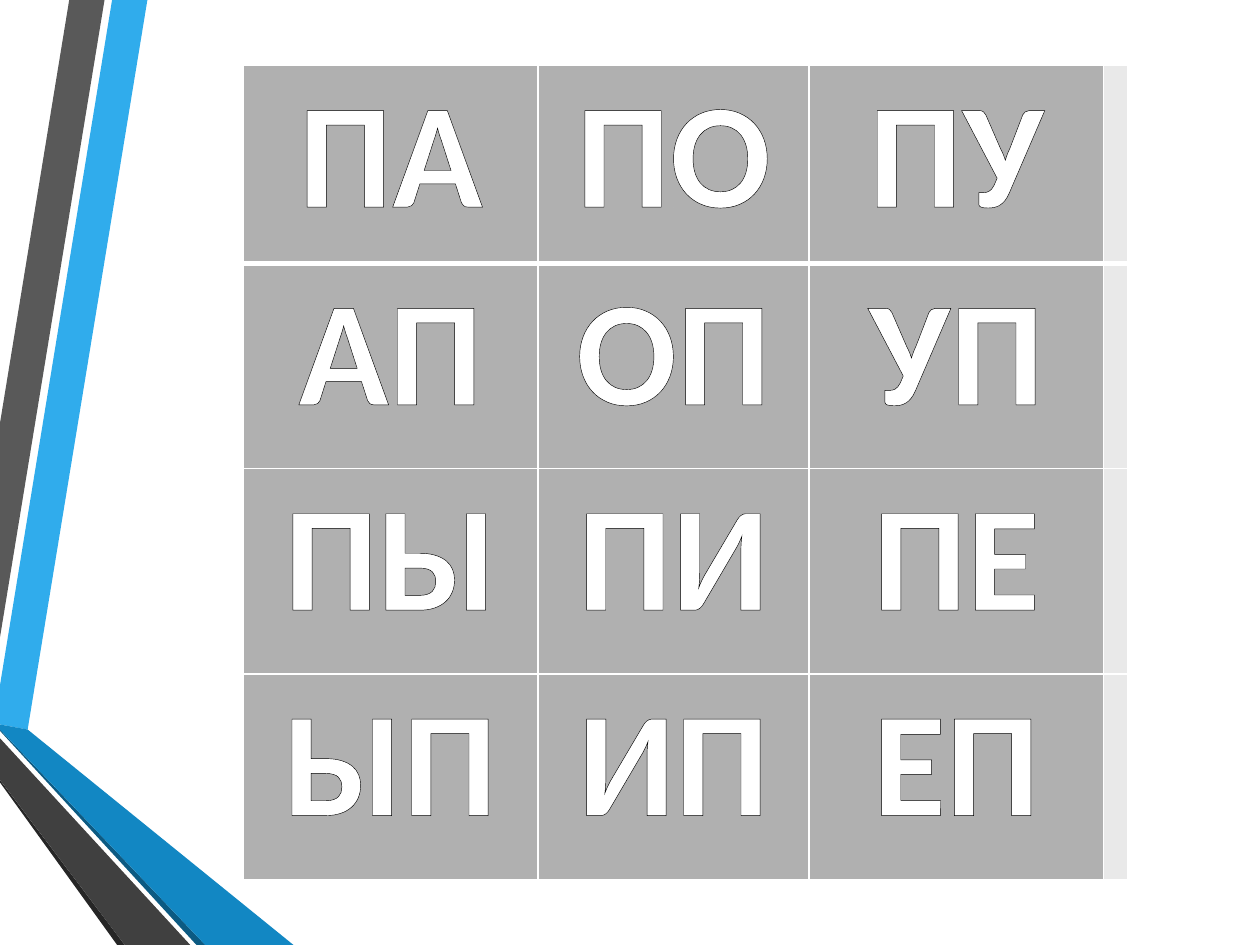
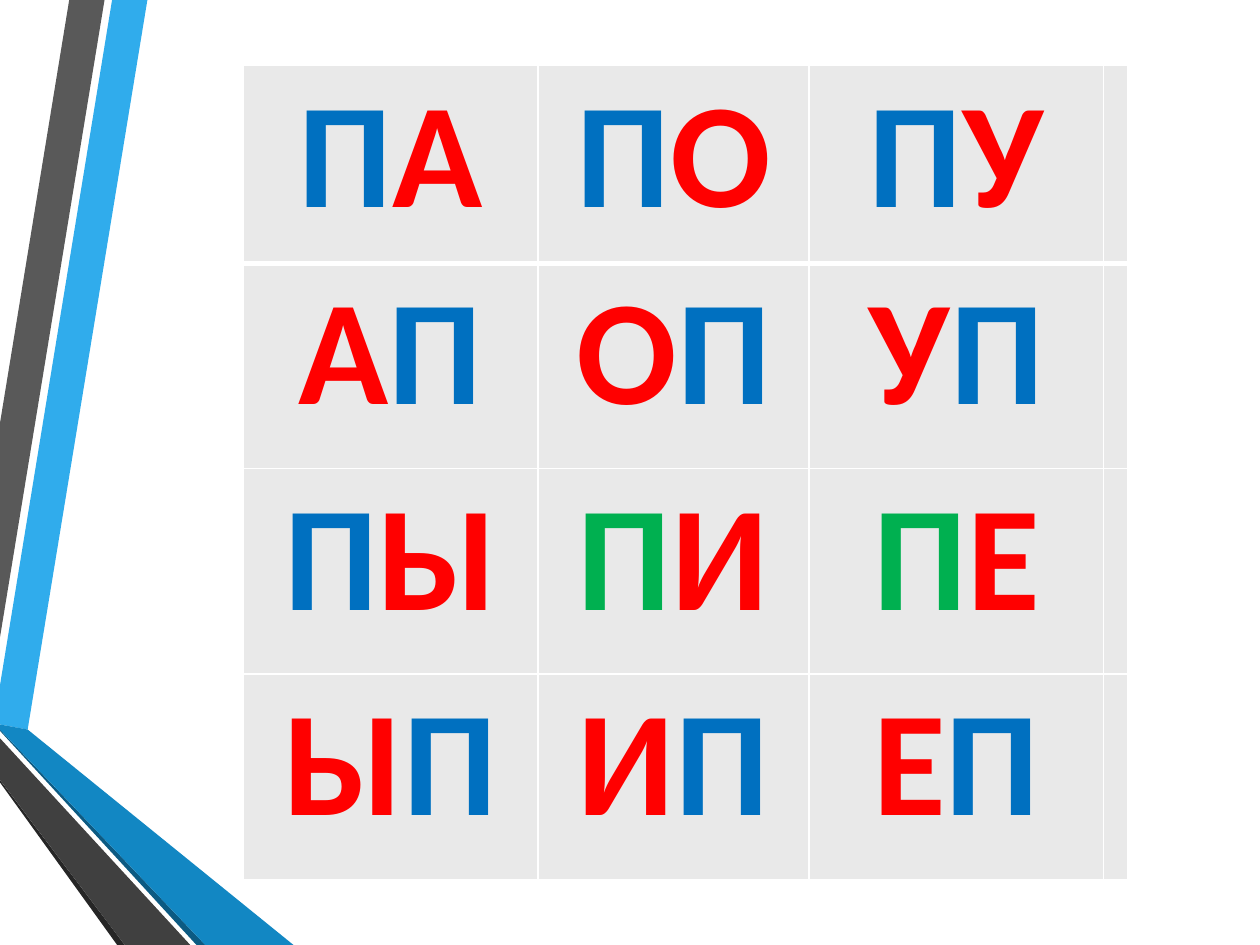
from lxml import etree
from pptx import Presentation
from pptx.dml.color import RGBColor
from pptx.enum.text import PP_ALIGN
from pptx.oxml.ns import qn
from pptx.util import Inches, Pt

CENTER = PP_ALIGN.CENTER
WHITE = RGBColor(0xFF, 0xFF, 0xFF)
BLACK = RGBColor(0, 0, 0)
GRAY = RGBColor(0xB0, 0xB0, 0xB0)
PALE = RGBColor(0xE9, 0xE9, 0xE9)
RED = RGBColor(0xFF, 0, 0)
BLUE = RGBColor(0, 0x70, 0xC0)
GREEN = RGBColor(0, 0xB0, 0x50)
SKY = RGBColor(0x30, 0xAC, 0xEC)
AZURE = RGBColor(0x12, 0x87, 0xC3)
NAVY = RGBColor(0x0C, 0x5A, 0x82)
STONE = RGBColor(0x59, 0x59, 0x59)
COAL = RGBColor(0x40, 0x40, 0x40)
INK = RGBColor(0x26, 0x26, 0x26)

BANDS = [
    (SKY, [(0, 5.44), (0, 5.75), (0.22, 5.79), (1.17, 0), (0.89, 0)]),
    (STONE, [(0.83, 0), (0.55, 0), (0, 3.36), (0, 5.06)]),
    (INK, [(0, 6.19), (0, 6.21), (0.93, 7.5), (0.99, 7.5)]),
    (NAVY, [(0, 5.79), (0, 5.8), (1.56, 7.5), (1.63, 7.5)]),
    (AZURE, [(0, 5.79), (1.63, 7.5), (2.33, 7.5), (0.22, 5.79), (0, 5.75)]),
    (COAL, [(0, 6.19), (0.99, 7.5), (1.51, 7.5), (0, 5.86)]),
]
GRID = [
    ["ПА", "ПО", "ПУ"],
    ["АП", "ОП", "УП"],
    ["ПЫ", "ПИ", "ПЕ"],
    ["ЫП", "ИП", "ЕП"],
]
BOX = (1.93, 0.52, 7.02, 6.46)
COLS = [2.34, 2.15, 2.34, 0.19]
ROWS = [1.57, 1.63, 1.63, 1.63]
THIN, THICK = 1, 3


def make_line(tag, color, width):
    """Return a solid line element of the given tag."""
    line = etree.Element(qn(tag), w=str(Pt(width)))
    fill = etree.SubElement(line, qn("a:solidFill"))
    etree.SubElement(fill, qn("a:srgbClr"), val=str(color))
    return line


def add_text(para, text, color=WHITE, size=85, font="Calibri", bold=True):
    """Add an outlined run to a paragraph."""
    run = para.add_run()
    run.text = text
    run.font.size, run.font.name, run.font.bold = Pt(size), font, bold
    run.font.color.rgb = color
    props = run.font.color and run._r.get_or_add_rPr()
    props.set("spc", "20")
    props.insert(0, make_line("a:ln", BLACK, 0.8))


def add_bands(layout, slide):
    """Draw the side bands and hand them to the shared layout."""
    for holder in list(layout.placeholders):
        layout.shapes.element.remove(holder.element)
    for color, points in BANDS:
        spots = [(Inches(x), Inches(y)) for x, y in points]
        pen = slide.shapes.build_freeform(*spots[0])
        pen.add_line_segments(spots[1:], close=True)
        band = pen.convert_to_shape()
        band.shadow.inherit = False
        band.fill.solid()
        band.fill.fore_color.rgb = color
        band.line.fill.background()
        layout.shapes.element.append(band.element)


def style_cell(cell, row, color):
    """Set the fill, insets and borders of a cell."""
    cell.margin_left = cell.margin_right = Inches(0.05)
    cell.margin_top = cell.margin_bottom = 0
    cell.fill.solid()
    cell.fill.fore_color.rgb = color
    props = cell._tc.get_or_add_tcPr()
    top = THICK if row == 1 else THIN
    base = THICK if row == 0 else THIN
    sides = zip(("a:lnL", "a:lnR", "a:lnT", "a:lnB"), (THIN, THIN, top, base))
    for place, (tag, width) in enumerate(sides):
        props.insert(place, make_line(tag, WHITE, width))


def plain_runs(word):
    """Keep a syllable whole and white."""
    return [(word, WHITE)]


def sound_runs(word):
    """Split a syllable: vowels red, hard П blue, soft П green."""
    soft = word in ("ПИ", "ПЕ")
    tone = GREEN if soft else BLUE
    return [(char, tone if char == "П" else RED) for char in word]


def add_grid(slide, box, color, split):
    """Fill the box with the table of syllables."""
    frame = slide.shapes.add_table(len(ROWS), len(COLS), *map(Inches, box))
    table = frame.table
    table.first_row = table.horz_banding = False
    for col, width in zip(table.columns, COLS):
        col.width = Inches(width)
    for num, (row, height) in enumerate(zip(table.rows, ROWS)):
        row.height = Inches(height)
        for cell, word in zip(row.cells, GRID[num] + [""]):
            style_cell(cell, num, color if word else PALE)
            if word:
                para = cell.text_frame.paragraphs[0]
                para.alignment = CENTER
                for text, tone in split(word):
                    add_text(para, text, color=tone)


def main():
    """Build both slides and save them."""
    deck = Presentation()
    deck.slide_width, deck.slide_height = Inches(10), Inches(7.5)
    layout = deck.slide_layouts[6]
    white = deck.slides.add_slide(layout)
    tinted = deck.slides.add_slide(layout)
    add_bands(layout, white)
    add_grid(white, BOX, GRAY, plain_runs)
    add_grid(tinted, BOX, PALE, sound_runs)
    deck.save("out.pptx")


if __name__ == "__main__":
    main()
